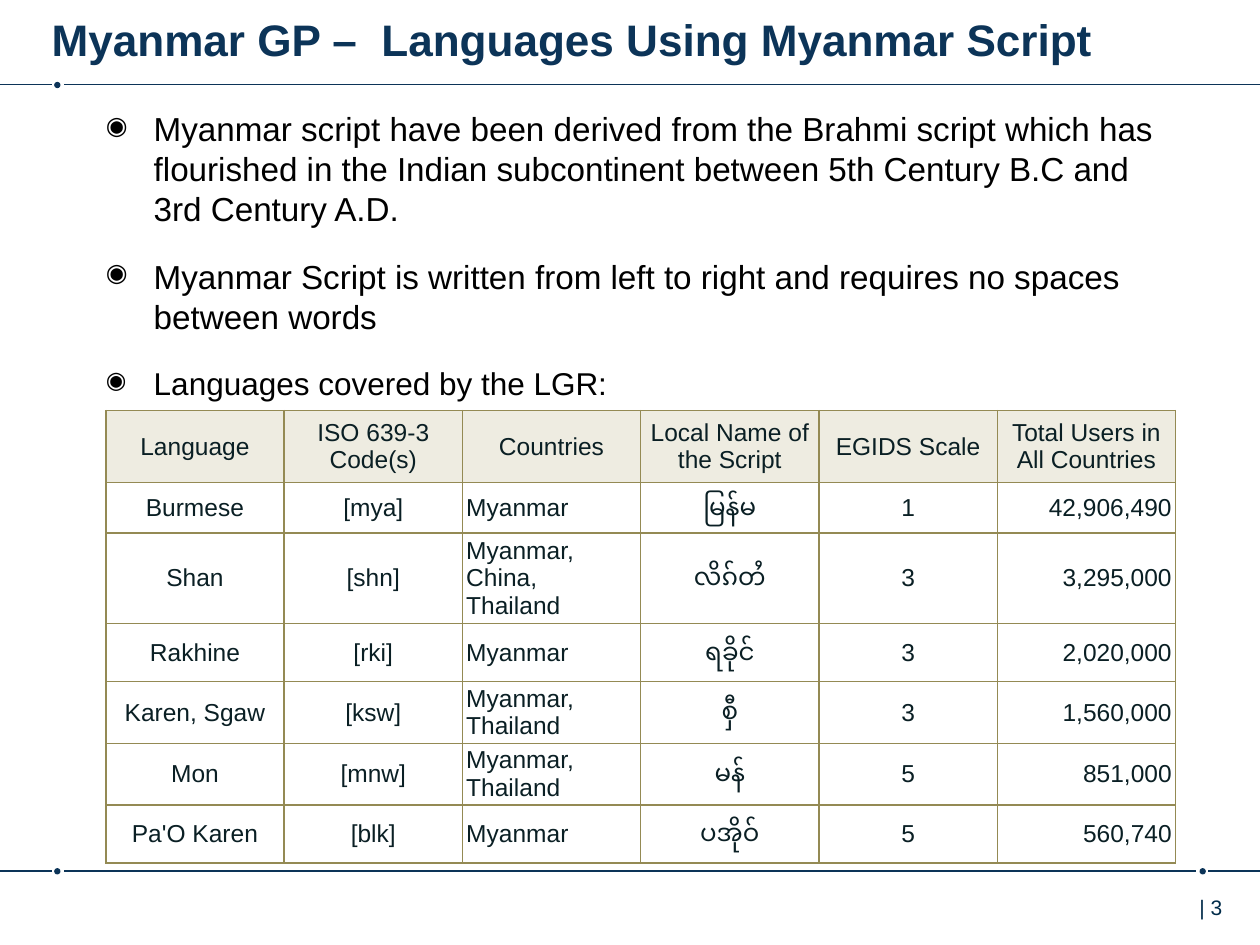
"""Build the slide on languages that use the Myanmar script."""
from lxml.etree import SubElement
from pptx import Presentation
from pptx.dml.color import RGBColor
from pptx.enum.shapes import MSO_CONNECTOR, MSO_SHAPE
from pptx.enum.text import MSO_ANCHOR, MSO_AUTO_SIZE, PP_ALIGN
from pptx.oxml import parse_xml
from pptx.oxml.ns import nsdecls, qn
from pptx.util import Inches, Pt

COLORS = {"navy": "0C3458", "page": "002B49", "body": "000000",
          "cell": "0A1F24", "header": "EEECE1", "border": "948A54"}
FONT = "Arial"
TITLE = "Myanmar GP –  Languages Using Myanmar Script"
PAGE = "| 3"
BULLETS = [
    ("Myanmar script have been derived from the Brahmi script which has flourished "
     "in the Indian subcontinent between 5th Century B.C and 3rd Century A.D.", 19),
    ("Myanmar Script is written from left to right and requires no spaces between words", 19),
    ("Languages covered by the LGR:", 18),
]
HEADER = ("Language", "ISO 639-3 Code(s)", "Countries", "Local Name of the Script",
          "EGIDS Scale", "Total Users in All Countries")
LANGUAGES = [
    ("Burmese", "[mya]", "Myanmar", "မြန်မာ", "1", "42,906,490"),
    ("Shan", "[shn]", "Myanmar, China, Thailand", "လိၵ်ႈတႆး", "3", "3,295,000"),
    ("Rakhine", "[rki]", "Myanmar", "ရခိုင်", "3", "2,020,000"),
    ("Karen, Sgaw", "[ksw]", "Myanmar, Thailand", "စှီၤ", "3", "1,560,000"),
    ("Mon", "[mnw]", "Myanmar, Thailand", "မန်", "5", "851,000"),
    ("Pa'O Karen", "[blk]", "Myanmar", "ပအိုဝ်ႏ", "5", "560,740"),
]
ALIGNS = [PP_ALIGN.CENTER, PP_ALIGN.CENTER, PP_ALIGN.LEFT,
          PP_ALIGN.CENTER, PP_ALIGN.CENTER, PP_ALIGN.RIGHT]
ROW_HEIGHTS = [0.57, 0.4, 0.71, 0.46, 0.49, 0.49, 0.46]
HEADER_INSETS = (0.07, 0.05, 0.07, 0.05)
BODY_INSETS = (0.03, 0.01, 0.03, 0.01)
LEFT, WIDTH = 0.84, 8.49
RULES = [
    {"y": 0.67, "dots": [0.43], "lines": [(0.41, 0), (10, 0.51)]},
    {"y": 6.91, "dots": [0.43, 9.52], "lines": [(0.41, 0), (9.49, 0.51), (9.59, 10)]},
]


def rgb(name):
    return RGBColor.from_string(COLORS[name])


def style(p, size, color, bold=False):
    for r in p.runs:
        f = r.font
        f.name, f.size, f.bold = FONT, Pt(size), bold
        f.color.rgb = rgb(color)


def set_insets(target, left, top, right, bottom):
    target.margin_left, target.margin_top = Inches(left), Inches(top)
    target.margin_right, target.margin_bottom = Inches(right), Inches(bottom)


def add_text_box(s, left, top, width, height, insets):
    tf = s.shapes.add_textbox(Inches(left), Inches(top), Inches(width), Inches(height)).text_frame
    tf.word_wrap = True
    set_insets(tf, *insets)
    return tf


def add_rule(s, y, dots, lines):
    for x in dots:
        dot = s.shapes.add_shape(MSO_SHAPE.OVAL, Inches(x), Inches(y - 0.02),
                                 Inches(0.05), Inches(0.05))
        dot.shadow.inherit = False
        dot.fill.solid()
        dot.fill.fore_color.rgb = rgb("navy")
        dot.line.fill.background()
    for start, end in lines:
        line = s.shapes.add_connector(MSO_CONNECTOR.STRAIGHT, Inches(start), Inches(y),
                                      Inches(end), Inches(y))
        line.line.color.rgb = rgb("navy")
        line.line.width = Pt(1)
        SubElement(line._element.spPr, qn("a:effectLst"))


def add_title(s):
    title = s.shapes.title
    title.left, title.top = Inches(0.41), Inches(0.06)
    title.width, title.height = Inches(8.76), Inches(0.49)
    tf = title.text_frame
    tf.text = TITLE
    tf.auto_size = MSO_AUTO_SIZE.NONE
    tf.vertical_anchor = MSO_ANCHOR.MIDDLE
    set_insets(tf, 0, 0.05, 0, 0.05)
    p = tf.paragraphs[0]
    p.alignment = PP_ALIGN.LEFT
    style(p, 25.2, "navy", bold=True)


def add_bullets(s):
    tf = add_text_box(s, LEFT, 0.86, WIDTH, 2.49, (0, 0, 0, 0))
    for i, (text, size) in enumerate(BULLETS):
        p = tf.add_paragraph() if i else tf.paragraphs[0]
        p.text = text
        p.line_spacing = 1.0
        p.space_before = Pt(16 if i else 0)
        pPr = p._p.get_or_add_pPr()
        pPr.set("marL", str(Inches(0.38)))
        pPr.set("indent", str(-Inches(0.38)))
        color = SubElement(pPr, qn("a:buClr"))
        SubElement(color, qn("a:srgbClr"), val=COLORS["body"])
        SubElement(pPr, qn("a:buSzPct"), val="75000")
        SubElement(pPr, qn("a:buChar"), char="◉")
        style(p, size, "body")


def set_borders(cell):
    tcPr = cell._tc.get_or_add_tcPr()
    for i, side in enumerate("LRTB"):
        tcPr.insert(i, parse_xml(
            f'<a:ln{side} {nsdecls("a")} w="{Pt(1)}"><a:solidFill>'
            f'<a:srgbClr val="{COLORS["border"]}"/></a:solidFill></a:ln{side}>'))


def fill_cell(cell, text, align, is_header):
    cell.text = text
    cell.vertical_anchor = MSO_ANCHOR.MIDDLE
    set_insets(cell, *(HEADER_INSETS if is_header else BODY_INSETS))
    p = cell.text_frame.paragraphs[0]
    p.alignment = align
    p.line_spacing = 1.0
    style(p, 14, "cell")
    if is_header:
        cell.fill.solid()
        cell.fill.fore_color.rgb = rgb("header")
    else:
        cell.fill.background()
    set_borders(cell)


def add_languages(s):
    rows = [HEADER] + LANGUAGES
    table = s.shapes.add_table(len(rows), len(HEADER), Inches(LEFT), Inches(3.26),
                               Inches(WIDTH), Inches(sum(ROW_HEIGHTS))).table
    table.first_row = table.horz_banding = False
    for row, height in zip(table.rows, ROW_HEIGHTS):
        row.height = Inches(height)
    for i, values in enumerate(rows):
        for j, text in enumerate(values):
            align = ALIGNS[j] if i else PP_ALIGN.CENTER
            fill_cell(table.cell(i, j), text, align, i == 0)


def main():
    prs = Presentation()
    prs.slide_width, prs.slide_height = Inches(10), Inches(7.5)
    s = prs.slides.add_slide(prs.slide_layouts[5])
    for rule in RULES:
        add_rule(s, **rule)
    tf = add_text_box(s, 9.29, 7.05, 0.87, 0.4, (0.23, 0.05, 0.1, 0.05))
    tf.text = PAGE
    style(tf.paragraphs[0], 12, "page")
    add_title(s)
    add_bullets(s)
    add_languages(s)
    prs.save("out.pptx")


if __name__ == "__main__":
    main()
